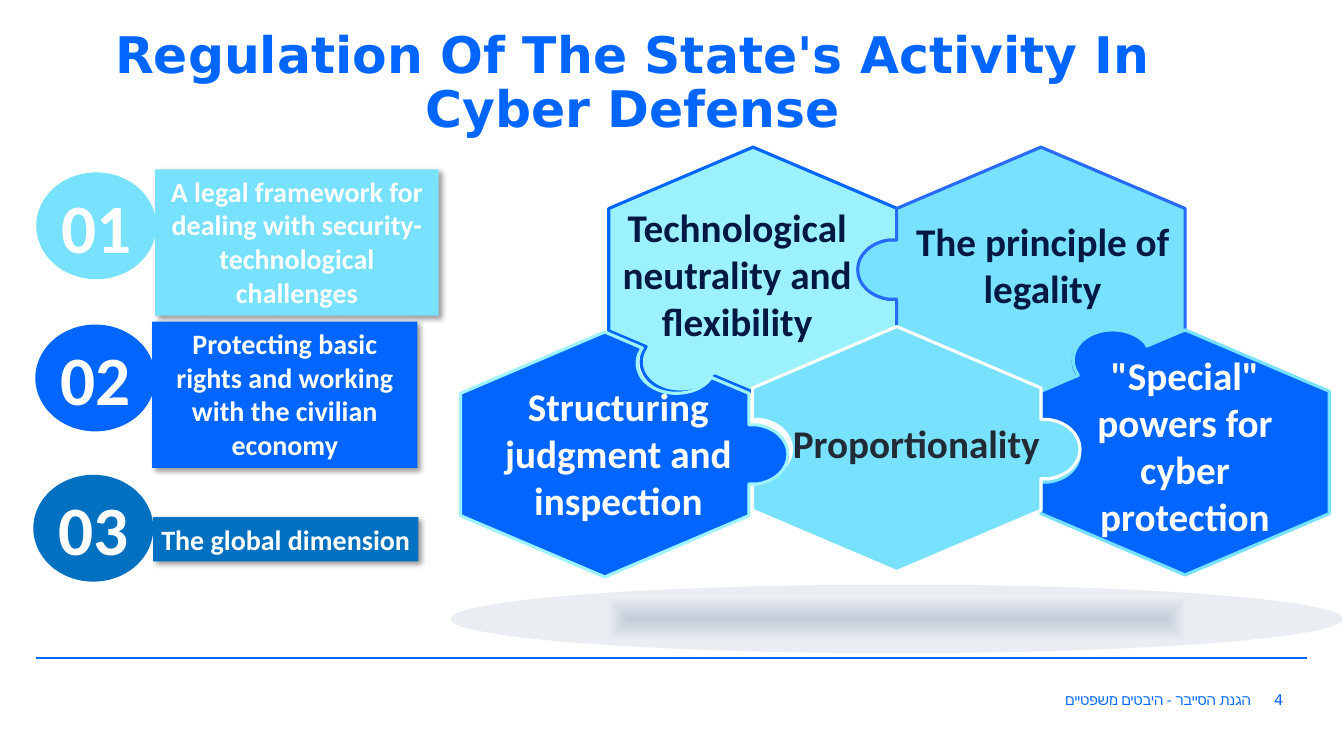
from pptx import Presentation
from pptx.dml.color import RGBColor
from pptx.enum.shapes import MSO_CONNECTOR, MSO_SHAPE
from pptx.enum.text import MSO_ANCHOR, MSO_AUTO_SIZE, PP_ALIGN
from pptx.oxml import parse_xml
from pptx.oxml.ns import nsdecls, qn
from pptx.util import Emu, Inches, Pt

CELL = 121920
BLUE, SKY, DEEP, NAVY, WHITE = "0166FF", "77E1FE", "0070C0", "031843", "FFFFFF"
HALF_WIDTH, SHOULDER, HIP, HEIGHT = 10.73, 4.57, 13.67, 18.23
SIDE_JOINT = [
    [(0, -2.2)], [(0.6, -2.2)],
    [(1.95, -2), (2.9, -1.1), (2.9, 0)],
    [(2.9, 1.1), (1.95, 2), (0.6, 2.2)], [(0, 2.2)],
]
CORNER_JOINT = [
    [(-2.85, 1.2)], [(-2.93, 1)],
    [(-3.45, 0.4), (-4.35, 0), (-5.4, 0)],
    [(-7.05, 0), (-8.32, 1), (-8.32, 2.25)],
    [(-8.32, 2.55), (-8.25, 2.85), (-8.1, 3.1)], [(-7.95, 3.38)],
]
CARDS = [
    ("01", (2.7, 12.83), (11.55, 12.6, 21.08, 10.88), SKY, MSO_ANCHOR.TOP,
     "A legal framework for dealing with security-technological challenges"),
    ("02", (2.63, 24.15), (11.33, 23.93, 19.73, 10.88), BLUE, MSO_ANCHOR.TOP,
     "Protecting basic rights and working with the civilian economy"),
    ("03", (2.48, 35.33), (11.4, 38.48, 19.73, 3.3), DEEP, MSO_ANCHOR.MIDDLE,
     "The global dimension"),
]
PIECES = [
    ((56.03, 10.95), {1: -1, 3: 0}, "9CF1FF", BLUE),
    ((77.45, 10.95), {2: 0, 4: -1}, SKY, "296BF9"),
    ((88.18, 24.55), {4: 1, 5: 0}, BLUE, SKY),
    ((66.73, 24.3), {1: 1, 4: 1}, SKY, WHITE),
    ((45, 24.7), {0: 0, 1: 1}, BLUE, "9DF4FE"),
]
LABELS = [
    ((44.35, 14.7, 21, 11.33), "Technological neutrality and flexibility", NAVY),
    ((66.1, 15.75, 22.95, 7.8), "The principle of legality", NAVY),
    ((78.9, 25.69, 18.53, 14.93), '"Special" powers for cyber protection', WHITE),
    ((56.55, 30.83, 23.25, 4.28), "Proportionality", "222A35"),
    ((35.66, 28.01, 20.7, 11.33), "Structuring judgment and inspection", WHITE),
]


def color(value):
    """Turn a hex string into a colour."""
    return RGBColor.from_string(value)


def cells(*lengths):
    """Turn lengths in grid cells into slide lengths."""
    return [Emu(round(length * CELL)) for length in lengths]


def write(shape, text, size, ink, font="Calibri", bold=True, align=PP_ALIGN.CENTER,
          anchor=MSO_ANCHOR.MIDDLE, inset=(0.05, 0.05), rtl=False):
    """Put one formatted paragraph into a shape."""
    frame = shape.text_frame
    frame.word_wrap = True
    frame.vertical_anchor = anchor
    frame.margin_left = frame.margin_right = Inches(inset[0])
    frame.margin_top = frame.margin_bottom = Inches(inset[1])
    paragraph = frame.paragraphs[0]
    paragraph.alignment = align
    if rtl:
        paragraph._p.get_or_add_pPr().set("rtl", "1")
    run = paragraph.add_run()
    run.text = text
    run.font.size, run.font.bold, run.font.name = Pt(size), bold, font
    run.font.color.rgb = color(ink)
    return paragraph


def add_label(slide, box, text, size, ink, **style):
    """Add a text box."""
    shape = slide.shapes.add_textbox(*cells(*box))
    write(shape, text, size, ink, **style)
    shape.text_frame.auto_size = MSO_AUTO_SIZE.SHAPE_TO_FIT_TEXT


def add_filled(slide, kind, box, fill):
    """Add a preset shape with a plain fill and no outline."""
    shape = slide.shapes.add_shape(kind, *cells(*box))
    shape.shadow.inherit = False
    shape.fill.solid()
    shape.fill.fore_color.rgb = color(fill)
    shape.line.fill.background()
    return shape


def add_card(slide, box, fill, anchor, text):
    """Add a rectangle with a soft shadow."""
    card = add_filled(slide, MSO_SHAPE.RECTANGLE, box, fill)
    write(card, text, 20, WHITE, anchor=anchor)
    card._element.spPr.find(qn("a:effectLst")).append(parse_xml(
        f'<a:outerShdw {nsdecls("a")} blurRad="{Pt(4)}" dist="{Pt(3)}" dir="2700000" '
        'algn="tl" rotWithShape="0"><a:srgbClr val="000000"><a:alpha val="40000"/>'
        '</a:srgbClr></a:outerShdw>'))


def add_floor(slide, box):
    """Add the ellipse under the puzzle, shaded from its centre."""
    floor = add_filled(slide, MSO_SHAPE.OVAL, box, WHITE)
    stops = "".join(
        f'<a:gs pos="{share * 1000}"><a:srgbClr val="{tone}"/></a:gs>'
        for share, tone in [(0, "C4CCDA"), (65, "EAEDF2"), (100, "EAEDF2")])
    properties = floor._element.spPr
    properties.replace(properties.find(qn("a:solidFill")), parse_xml(
        f'<a:gradFill {nsdecls("a")}><a:gsLst>{stops}</a:gsLst><a:path path="shape">'
        '<a:fillToRect l="50000" t="50000" r="50000" b="50000"/></a:path></a:gradFill>'))


def place(joint, origin, flip_x, flip_y, reverse):
    """Move a joint to its origin; segment lengths read the same both ways."""
    points = [(origin[0] + flip_x * x, origin[1] + flip_y * y)
              for segment in joint for x, y in segment]
    remaining = iter(points[::-1] if reverse else points)
    return [[next(remaining) for _ in segment] for segment in joint]


def joint_segments(edge, start, end, bulge):
    """Place the joint of one hexagon edge, in clockwise order."""
    reverse = edge in (0, 4, 5)
    if bulge:
        middle = (start[0], (start[1] + end[1]) / 2)
        return place(SIDE_JOINT, middle, bulge, 1, reverse)
    anchor, other = (end, start) if reverse else (start, end)
    return place(CORNER_JOINT, anchor, 1, 1 if other[1] > anchor[1] else -1, reverse)


def bend(shape, segments):
    """Turn each three-point segment of a freeform into a Bezier curve."""
    lines = iter(list(shape._element.iter(qn("a:lnTo"))))
    for segment in segments:
        first, *others = [next(lines) for _ in segment]
        if others:
            curve = parse_xml(f'<a:cubicBezTo {nsdecls("a")}/>')
            first.addprevious(curve)
            for line in (first, *others):
                curve.append(line[0])
                line.getparent().remove(line)


def add_piece(slide, peak, joints, fill, outline):
    """Add a hexagonal puzzle piece; joints map edges to a bulge direction."""
    x, y = peak
    right, left = x + HALF_WIDTH, x - HALF_WIDTH
    corners = [(x, y), (right, y + SHOULDER), (right, y + HIP),
               (x, y + HEIGHT), (left, y + HIP), (left, y + SHOULDER)]
    segments = []
    for edge, start in enumerate(corners):
        segments.append([start])
        if edge in joints:
            segments += joint_segments(edge, start, corners[(edge + 1) % 6], joints[edge])
    points = [cells(*point) for segment in segments for point in segment]
    builder = slide.shapes.build_freeform(*points[0])
    builder.add_line_segments(points[1:], close=True)
    piece = builder.convert_to_shape()
    bend(piece, segments[1:])
    piece.shadow.inherit = False
    piece.fill.solid()
    piece.fill.fore_color.rgb = color(fill)
    piece.line.color.rgb = color(outline)
    piece.line.width = Pt(2.25)


def add_footer(slide):
    """Add the rule, the footer text and the page number."""
    rule = slide.shapes.add_connector(
        MSO_CONNECTOR.STRAIGHT, *cells(2.7, 48.95, 97.28, 48.95))
    rule.line.color.rgb = color(BLUE)
    rule.line.width = Pt(1)
    rule._element.spPr.append(parse_xml(f'<a:effectLst {nsdecls("a")}/>'))
    style = dict(font="DejaVu Sans", bold=False, anchor=MSO_ANCHOR.TOP)
    add_label(slide, (58.73, 51, 34.73, 2.1), "הגנת הסייבר - היבטים משפטיים",
              10.5, BLUE, align=PP_ALIGN.RIGHT, rtl=True, **style)
    add_label(slide, (94.43, 51, 3, 2.1), "4", 10.5, BLUE, align=PP_ALIGN.LEFT, **style)


def add_title(slide, box, text):
    """Place and format the title."""
    title = slide.shapes.title
    title.left, title.top, title.width, title.height = cells(*box)
    paragraph = write(title, text, 36, BLUE, font="DejaVu Sans",
                      anchor=MSO_ANCHOR.TOP, inset=(0.1, 0.05), rtl=True)
    paragraph.line_spacing = 0.9
    title.text_frame.auto_size = MSO_AUTO_SIZE.NONE


def main():
    """Build the slide."""
    presentation = Presentation()
    presentation.slide_width, presentation.slide_height = cells(100, 56.25)
    slide = presentation.slides.add_slide(presentation.slide_layouts[5])
    add_footer(slide)
    add_title(slide, (6.95, 1.84, 80.25, 5.55),
              "Regulation Of The State's Activity In Cyber Defense")
    add_floor(slide, (33.53, 43.5, 66.38, 5.1))
    for piece in PIECES:
        add_piece(slide, *piece)
    for box, text, ink in LABELS:
        add_label(slide, box, text, 28, ink, inset=(0.1, 0.05))
    for number, corner, box, fill, anchor, text in CARDS:
        add_card(slide, box, fill, anchor, text)
        badge = add_filled(slide, MSO_SHAPE.OVAL, (*corner, 8.93, 7.95), fill)
        write(badge, number, 49.5, WHITE, inset=(0, 0.05))
    presentation.save("out.pptx")


if __name__ == "__main__":
    main()
